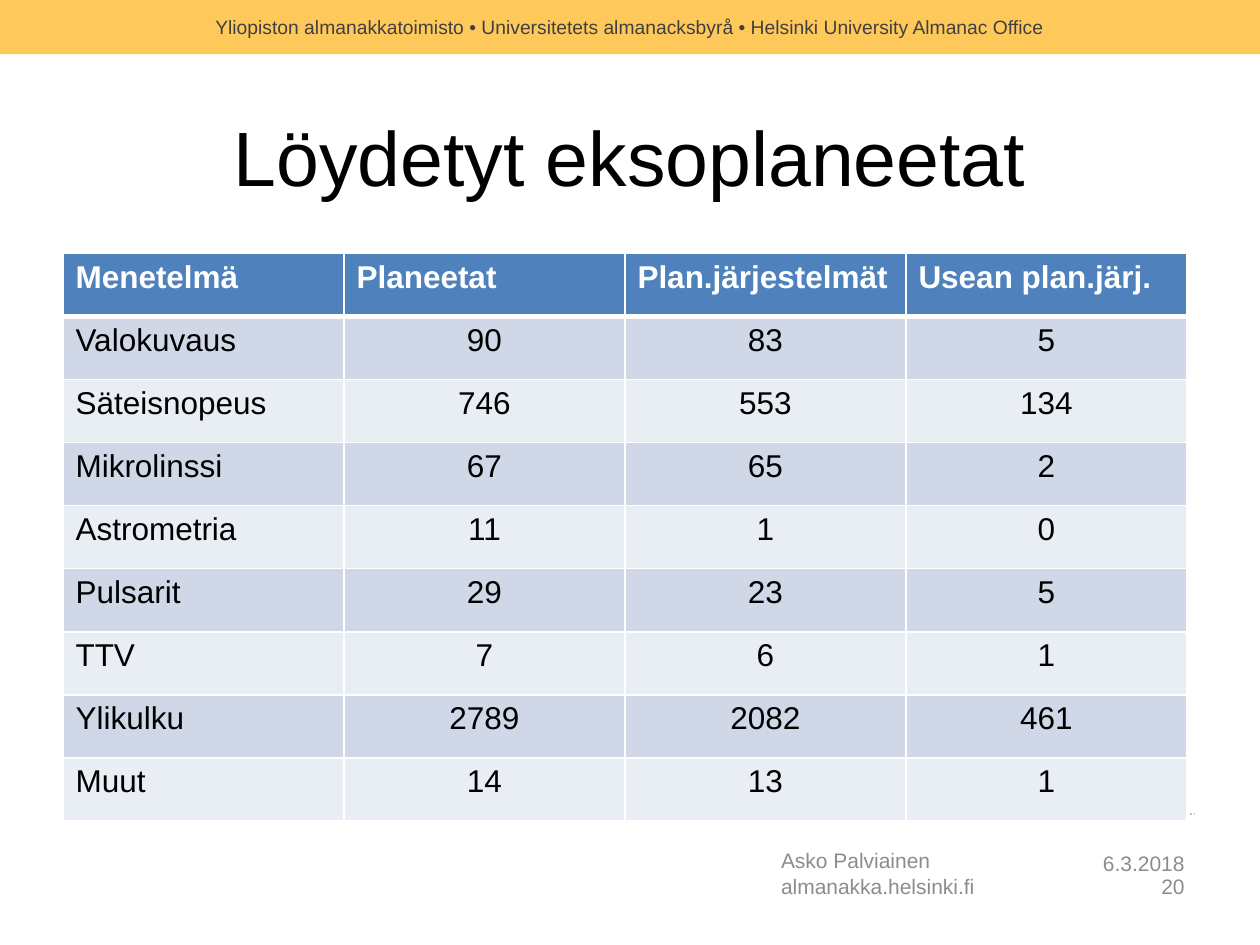
from lxml.etree import SubElement
from pptx import Presentation
from pptx.dml.color import RGBColor
from pptx.enum.dml import MSO_LINE
from pptx.enum.shapes import MSO_CONNECTOR, MSO_SHAPE
from pptx.enum.text import MSO_ANCHOR, PP_ALIGN
from pptx.oxml.ns import qn
from pptx.util import Inches, Pt

FONT = "Arial"
WHITE = "FFFFFF"
BLACK = "000000"
FOOTER_GRAY = "8C8C8C"
HEADER_BLUE = "4F81BD"
BAND_FILLS = ("D0D8E8", "E9EDF4")

HEADINGS = ("Menetelmä", "Planeetat", "Plan.järjestelmät", "Usean plan.järj.")
METHODS = (
    ("Valokuvaus", 90, 83, 5),
    ("Säteisnopeus", 746, 553, 134),
    ("Mikrolinssi", 67, 65, 2),
    ("Astrometria", 11, 1, 0),
    ("Pulsarit", 29, 23, 5),
    ("TTV", 7, 6, 1),
    ("Ylikulku", 2789, 2082, 461),
    ("Muut", 14, 13, 1),
)


def color(value):
    return RGBColor.from_string(value)


def format_text(text_frame, size, text_color, alignment, bold=False):
    for paragraph in text_frame.paragraphs:
        paragraph.alignment = alignment
        for run in paragraph.runs:
            run.font.name = FONT
            run.font.size = Pt(size)
            run.font.bold = bold
            run.font.color.rgb = color(text_color)


def add_text(slide, box, text, size, text_color, alignment, anchor=MSO_ANCHOR.TOP):
    shape = slide.shapes.add_textbox(*map(Inches, box))
    text_frame = shape.text_frame
    text_frame.word_wrap = True
    text_frame.vertical_anchor = anchor
    text_frame.text = text
    format_text(text_frame, size, text_color, alignment)


def add_banner(slide, left, top, width, height):
    banner = slide.shapes.add_shape(
        MSO_SHAPE.RECTANGLE, Inches(left), Inches(top), Inches(width), Inches(height))
    banner.shadow.inherit = False
    banner.fill.solid()
    banner.fill.fore_color.rgb = color("FEC85A")
    banner.line.fill.background()
    add_text(slide, (left + 0.5, top + 0.07, width - 1, 0.29),
             "Yliopiston almanakkatoimisto • Universitetets almanacksbyrå • "
             "Helsinki University Almanac Office",
             11, "404040", PP_ALIGN.CENTER)


def add_dotted_rule(slide, left, top, width):
    rule = slide.shapes.add_connector(
        MSO_CONNECTOR.STRAIGHT, Inches(left), Inches(top), Inches(left + width), Inches(top))
    rule.line.color.rgb = color("BFBFBF")
    rule.line.width = Pt(1)
    rule.line.dash_style = MSO_LINE.ROUND_DOT
    SubElement(rule.element.spPr, qn("a:effectLst"))


def set_borders(cell, top, bottom):
    properties = cell._tc.get_or_add_tcPr()
    for side, width in (("lnL", 1), ("lnR", 1), ("lnT", top), ("lnB", bottom)):
        border = SubElement(properties, qn(f"a:{side}"), w=str(Pt(width)))
        fill = SubElement(border, qn("a:solidFill"))
        SubElement(fill, qn("a:srgbClr"), val=WHITE)


def add_planet_table(slide, left, top, width, height):
    rows = (HEADINGS,) + METHODS
    table = slide.shapes.add_table(
        len(rows), len(HEADINGS),
        Inches(left), Inches(top), Inches(width), Inches(height)).table
    for row_index, values in enumerate(rows):
        is_header = row_index == 0
        fill = HEADER_BLUE if is_header else BAND_FILLS[(row_index - 1) % 2]
        for column_index, value in enumerate(values):
            cell = table.cell(row_index, column_index)
            set_borders(cell, 3 if row_index == 1 else 1, 3 if is_header else 1)
            cell.fill.solid()
            cell.fill.fore_color.rgb = color(fill)
            cell.text_frame.text = str(value)
            is_left = is_header or column_index == 0
            format_text(cell.text_frame, 18, WHITE if is_header else BLACK,
                        PP_ALIGN.LEFT if is_left else PP_ALIGN.CENTER, is_header)


def add_footer(slide, left, top, width):
    right = left + width
    add_text(slide, (left, top, 2.11, 0.65), "Asko Palviainen\nalmanakka.helsinki.fi",
             12, FOOTER_GRAY, PP_ALIGN.LEFT)
    add_text(slide, (right - 1.28, top, 1.28, 0.34), "6.3.2018",
             12, FOOTER_GRAY, PP_ALIGN.RIGHT, MSO_ANCHOR.MIDDLE)
    add_text(slide, (right - 0.85, top + 0.22, 0.85, 0.27), "20",
             12, FOOTER_GRAY, PP_ALIGN.RIGHT, MSO_ANCHOR.MIDDLE)


def main():
    presentation = Presentation()
    presentation.slide_width = Inches(10)
    presentation.slide_height = Inches(7.5)
    slide = presentation.slides.add_slide(presentation.slide_layouts[6])
    add_dotted_rule(slide, 0.49, 6.46, 9.01)
    add_banner(slide, 0, 0, 10, 0.43)
    add_text(slide, (0.5, 0.61, 9, 1.25), "Löydetyt eksoplaneetat",
             44, BLACK, PP_ALIGN.CENTER, MSO_ANCHOR.MIDDLE)
    add_footer(slide, 6.1, 6.68, 3.4)
    add_planet_table(slide, 0.5, 2.01, 8.92, 4.51)
    presentation.save("out.pptx")


if __name__ == "__main__":
    main()
